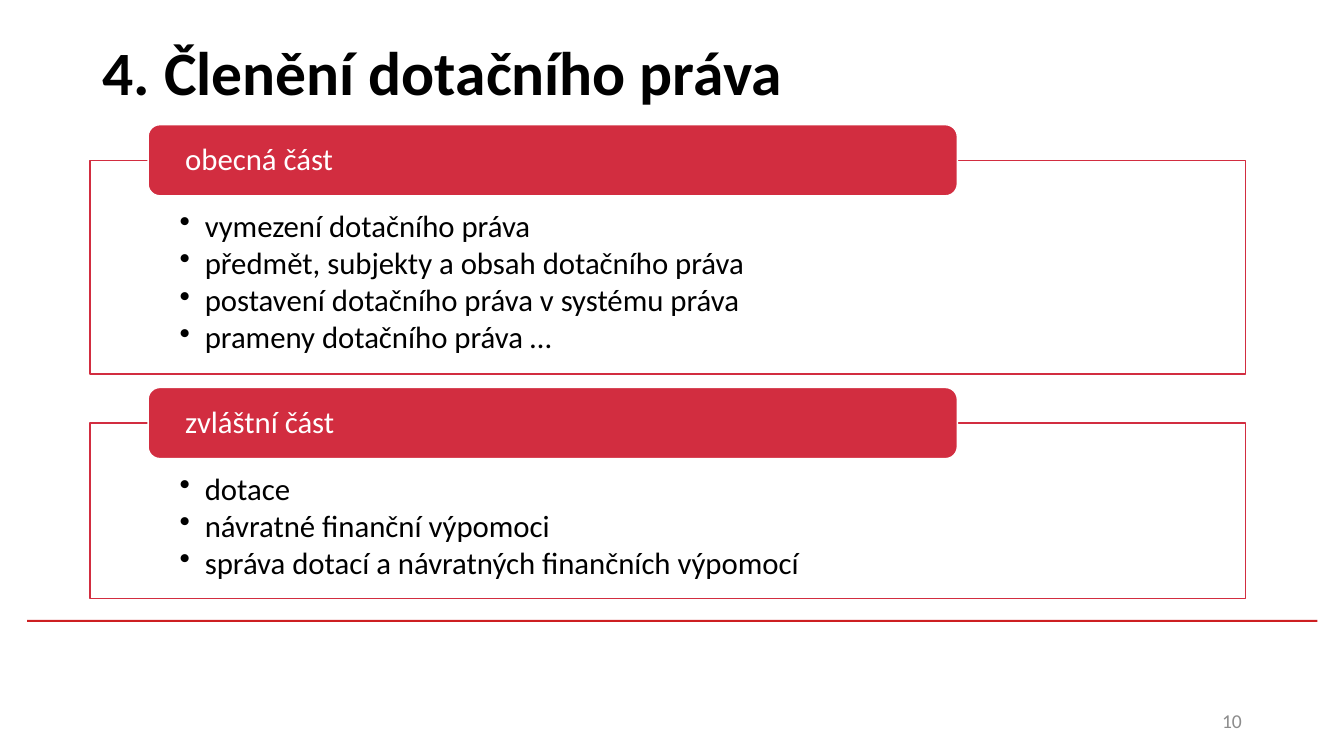
from lxml import etree
from pptx import Presentation
from pptx.dml.color import RGBColor
from pptx.enum import shapes, text
from pptx.oxml import ns
from pptx.util import Pt

RED = RGBColor(0xD2, 0x2D, 0x40)
RULE = RGBColor(0xCD, 0x1F, 0x21)
WHITE = RGBColor(0xFF, 0xFF, 0xFF)
BLACK = RGBColor(0, 0, 0)
GRAY = RGBColor(0x8C, 0x8C, 0x8C)
KIND = shapes.MSO_SHAPE
ALIGN = text.PP_ALIGN
ANCHOR = text.MSO_ANCHOR

PARTS = [
    (114.5, 152.6, "obecná část", [
        "vymezení dotačního práva",
        "předmět, subjekty a\u00a0obsah dotačního práva",
        "postavení dotačního práva v\u00a0systému práva",
        "prameny dotačního práva …",
    ]),
    (302.2, 125.3, "zvláštní část", [
        "dotace",
        "návratné finanční výpomoci",
        "správa dotací a návratných finančních výpomocí",
    ]),
]


def add_bullet(para):
    props = para._p.get_or_add_pPr()
    props.set("marL", str(Pt(18)))
    props.set("indent", str(Pt(-18)))
    mark = etree.SubElement(props, ns.qn("a:buChar"))
    mark.set("char", "•")


def write(shape, lines, size=22, color=BLACK, bold=False, align=ALIGN.LEFT,
          anchor=ANCHOR.MIDDLE, inset=(7.2, 3.6, 7.2, 3.6), bullet=False,
          pitch=0.9, after=0):
    frame = shape.text_frame
    frame.word_wrap = True
    frame.vertical_anchor = anchor
    (frame.margin_left, frame.margin_top,
     frame.margin_right, frame.margin_bottom) = map(Pt, inset)
    for i, line in enumerate(lines):
        para = frame.add_paragraph() if i else frame.paragraphs[0]
        if bullet:
            add_bullet(para)
        para.alignment = align
        para.line_spacing = pitch
        para.space_after = Pt(after)
        run = para.add_run()
        run.text = line
        font = run.font
        font.name = "Calibri"
        font.size = Pt(size)
        font.bold = bold
        font.color.rgb = color


def add_label(slide, box, line, **style):
    write(slide.shapes.add_textbox(*map(Pt, box)), [line], **style)


def add_box(slide, kind, box, fill, line=None):
    shape = slide.shapes.add_shape(kind, *map(Pt, box))
    shape.shadow.inherit = False
    shape.fill.solid()
    shape.fill.fore_color.rgb = fill
    if line is None:
        shape.line.fill.background()
    else:
        shape.line.color.rgb = line
        shape.line.width = Pt(1)
    return shape


def add_part(slide, top, height, title, items):
    panel = add_box(slide, KIND.RECTANGLE, (64.3, top, 825.6, height),
                    WHITE, RED)
    write(panel, items, anchor=ANCHOR.TOP, inset=(64, 36, 64, 12),
          bullet=True, after=2.8)
    head = add_box(slide, KIND.ROUNDED_RECTANGLE,
                   (105.8, top - 25.4, 578, 50.8), RED, WHITE)
    write(head, [title], color=WHITE, inset=(24, 0, 24, 0))


def main():
    deck = Presentation()
    deck.slide_width = Pt(960)
    deck.slide_height = Pt(540)
    slide = deck.slides.add_slide(deck.slide_layouts[6])
    add_box(slide, KIND.RECTANGLE, (19.4, 442.8, 921.6, 1.5), RULE)
    add_label(slide, (66.2, 1.4, 828, 104.4), "4. Členění dotačního práva",
              size=44, bold=True)
    add_label(slide, (678.2, 500.4, 216, 28.8), "10", size=14, color=GRAY,
              align=ALIGN.RIGHT, pitch=1.0)
    for part in PARTS:
        add_part(slide, *part)
    deck.save("out.pptx")


if __name__ == "__main__":
    main()
